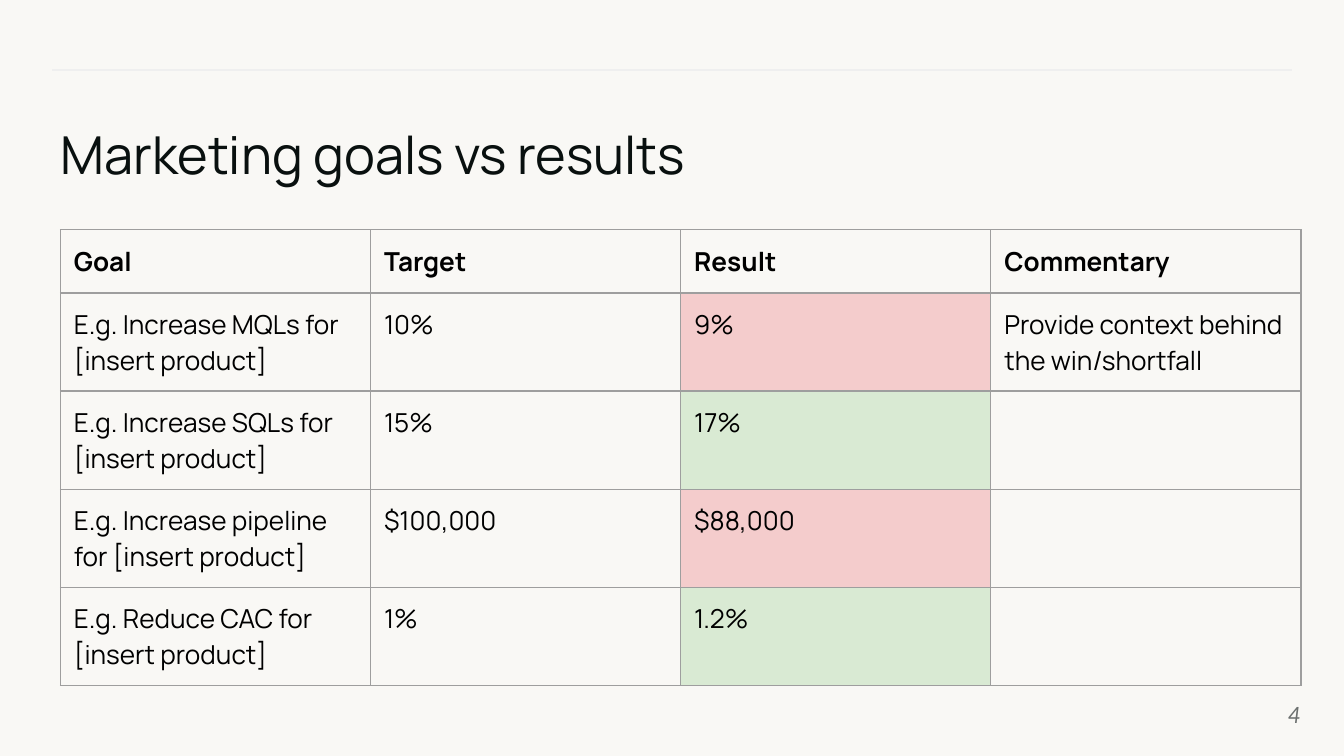
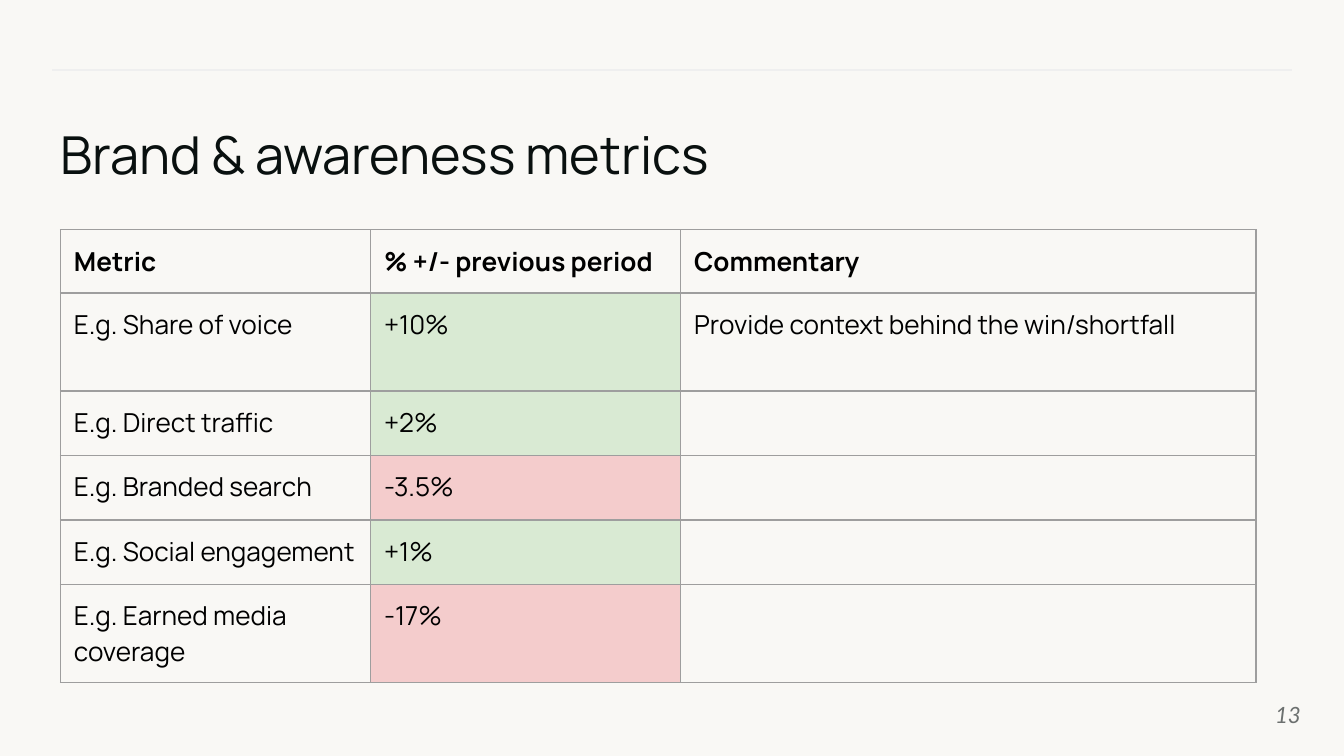
"""Build two marketing report slides, each with a scored results table."""
import pptx
import pptx.dml.color
import pptx.enum.shapes
import pptx.enum.text
import pptx.oxml
import pptx.oxml.ns
import pptx.util
from pptx.util import Inches, Pt

COLORS = {
    "background": "F9F8F5",
    "rule": "EFEFEF",
    "title": "09100F",
    "number": "6C706F",
    "text": "000000",
    "border": "9E9E9E",
    "missed": "F4CCCC",
    "met": "D9EAD3",
}
FORMATS = {
    "title": {"name": "Manrope", "size": Pt(28), "bold": False},
    "number": {"name": "Lato", "size": Pt(12), "italic": True},
    "header": {"name": "Manrope", "size": Pt(14), "bold": True},
    "body": {"name": "Manrope", "size": Pt(14), "bold": False},
}
CONTENT_WIDTH = 9.23
TITLE_BOX = (0.45, 0.91, CONTENT_WIDTH, 0.51)
NUMBER_BOX = (9.08, 5.1, 0.6, 0.43)
RULE_ENDS = (9.61, 0.52, 0.39, 0.52)
TABLE_LEFT, TABLE_TOP = 0.45, 1.71
COLUMN = CONTENT_WIDTH / 4
HEADER_ROW, SINGLE_ROW, DOUBLE_ROW = 0.47, 0.48, 0.73
CELL_INSET = 0.1
SIDES = ("left", "top", "right", "bottom")

SLIDES = [
    {
        "title": "Marketing goals vs results",
        "number": "4",
        "widths": [COLUMN] * 4,
        "heights": [HEADER_ROW] + [DOUBLE_ROW] * 4,
        "scored_column": 2,
        "scores": ["missed", "met", "missed", "met"],
        "rows": [
            ("Goal", "Target", "Result", "Commentary"),
            ("E.g. Increase MQLs for [insert product]", "10%", "9%",
             "Provide context behind the win/shortfall"),
            ("E.g. Increase SQLs for [insert product]", "15%", "17%", ""),
            ("E.g. Increase pipeline for [insert product]", "$100,000", "$88,000", ""),
            ("E.g. Reduce CAC for [insert product]", "1%", "1.2%", ""),
        ],
    },
    {
        "title": "Brand & awareness metrics",
        "number": "13",
        "widths": [COLUMN, COLUMN, 4.28],
        "heights": [HEADER_ROW, DOUBLE_ROW] + [SINGLE_ROW] * 3 + [DOUBLE_ROW],
        "scored_column": 1,
        "scores": ["met", "met", "missed", "met", "missed"],
        "rows": [
            ("Metric", "% +/- previous period", "Commentary"),
            ("E.g. Share of voice", "+10%", "Provide context behind the win/shortfall"),
            ("E.g. Direct traffic", "+2%", ""),
            ("E.g. Branded search", "-3.5%", ""),
            ("E.g. Social engagement", "+1%", ""),
            ("E.g. Earned media coverage", "-17%", ""),
        ],
    },
]


def color(name):
    return pptx.dml.color.RGBColor.from_string(COLORS[name])


def write(frame, text, style, color_name):
    frame.text = text
    paragraph = frame.paragraphs[0]
    for font in [paragraph.font] + [run.font for run in paragraph.runs]:
        for key, value in FORMATS[style].items():
            setattr(font, key, value)
        font.color.rgb = color(color_name)
    return paragraph


def set_insets(target, inset):
    for side in SIDES:
        setattr(target, f"margin_{side}", Inches(inset))


def add_rule(slide):
    rule = slide.shapes.add_connector(
        pptx.enum.shapes.MSO_CONNECTOR.STRAIGHT, *map(Inches, RULE_ENDS))
    rule.line.color.rgb = color("rule")
    rule.line.width = Pt(0.75)
    rule._element.spPr.append(pptx.oxml.parse_xml(
        f"<a:effectLst {pptx.oxml.ns.nsdecls('a')}/>"))


def add_title(slide, text):
    title = slide.shapes.title
    title.left, title.top, title.width, title.height = map(Inches, TITLE_BOX)
    frame = title.text_frame
    set_insets(frame, 0)
    frame.word_wrap = True
    frame.auto_size = pptx.enum.text.MSO_AUTO_SIZE.NONE
    frame.vertical_anchor = pptx.enum.text.MSO_ANCHOR.TOP
    paragraph = write(frame, text, "title", "title")
    paragraph.alignment = pptx.enum.text.PP_ALIGN.LEFT
    paragraph.space_after = Pt(10)


def add_number(slide, text):
    frame = slide.shapes.add_textbox(*map(Inches, NUMBER_BOX)).text_frame
    set_insets(frame, 0)
    frame.word_wrap = True
    frame.vertical_anchor = pptx.enum.text.MSO_ANCHOR.MIDDLE
    paragraph = write(frame, text, "number", "number")
    paragraph.alignment = pptx.enum.text.PP_ALIGN.RIGHT


def add_borders(cell):
    properties = cell._tc.get_or_add_tcPr()
    for side in ("lnL", "lnR", "lnT", "lnB"):
        properties.append(pptx.oxml.parse_xml(
            f'<a:{side} {pptx.oxml.ns.nsdecls("a")} w="{int(Pt(0.75))}"><a:solidFill>'
            f'<a:srgbClr val="{COLORS["border"]}"/></a:solidFill></a:{side}>'))


def add_results_table(slide, content):
    rows, widths, heights = content["rows"], content["widths"], content["heights"]
    table = slide.shapes.add_table(
        len(rows), len(widths), Inches(TABLE_LEFT), Inches(TABLE_TOP),
        Inches(sum(widths)), Inches(sum(heights))).table
    table.first_row = table.horz_banding = False
    for column, width in zip(table.columns, widths):
        column.width = Inches(width)
    for row, height in zip(table.rows, heights):
        row.height = Inches(height)
    for row_index, row in enumerate(rows):
        for column_index, text in enumerate(row):
            cell = table.cell(row_index, column_index)
            set_insets(cell, CELL_INSET)
            write(cell.text_frame, text, "body" if row_index else "header", "text")
            add_borders(cell)
            if row_index and column_index == content["scored_column"]:
                cell.fill.solid()
                cell.fill.fore_color.rgb = color(content["scores"][row_index - 1])
            else:
                cell.fill.background()


def main():
    presentation = pptx.Presentation()
    presentation.slide_width = Inches(10)
    presentation.slide_height = Inches(10) * 9 // 16
    background = presentation.slide_master.background.fill
    background.solid()
    background.fore_color.rgb = color("background")
    for content in SLIDES:
        slide = presentation.slides.add_slide(presentation.slide_layouts[5])
        add_rule(slide)
        add_title(slide, content["title"])
        add_number(slide, content["number"])
        add_results_table(slide, content)
    presentation.save("out.pptx")


if __name__ == "__main__":
    main()
